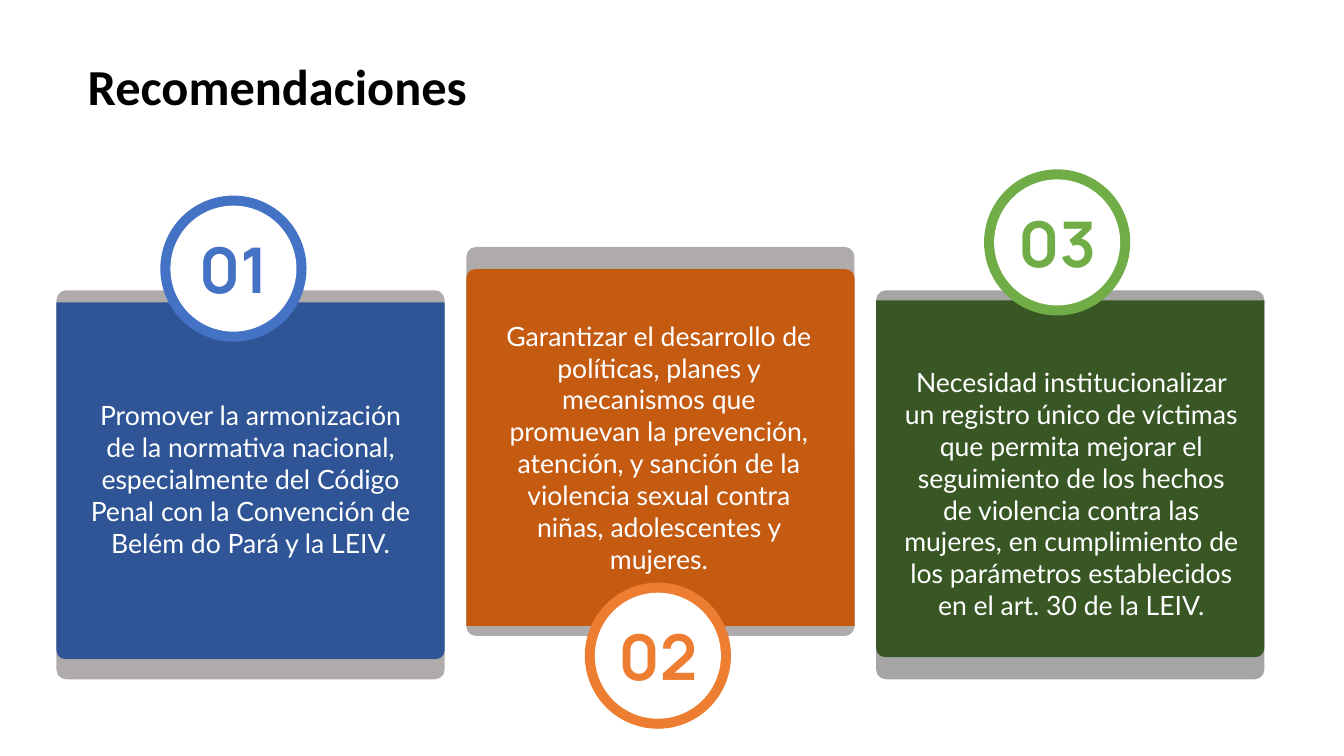
from dataclasses import dataclass

from pptx import Presentation
from pptx.dml.color import RGBColor
from pptx.enum.shapes import MSO_SHAPE
from pptx.enum.text import MSO_ANCHOR, PP_ALIGN
from pptx.util import Inches, Pt

ROUNDED = MSO_SHAPE.ROUNDED_RECTANGLE
TWO_ROUNDED = MSO_SHAPE.ROUND_2_SAME_RECTANGLE
OVAL = MSO_SHAPE.OVAL
LEFT, CENTER = PP_ALIGN.LEFT, PP_ALIGN.CENTER
TOP, MIDDLE = MSO_ANCHOR.TOP, MSO_ANCHOR.MIDDLE


@dataclass(frozen=True)
class Theme:
    white: str = "FFFFFF"
    black: str = "000000"
    warm_gray: str = "AFABAB"
    gray: str = "A5A5A5"
    blue: str = "4472C4"
    dark_blue: str = "2F5597"
    orange: str = "ED7D31"
    dark_orange: str = "C55A11"
    green: str = "70AD47"
    dark_green: str = "385724"
    title_font: str = "Calibri"
    number_font: str = "Manrope"
    body_font: str = "Lato"
    title_size: int = 36
    number_size: int = 45
    body_size: int = 19


theme = Theme()


def add_block(kind, left, top, width, height, color, corners=()):
    shape = slide.shapes.add_shape(
        kind, Inches(left), Inches(top), Inches(width), Inches(height))
    for index, corner in enumerate(corners):
        shape.adjustments[index] = corner
    shape.shadow.inherit = False
    shape.fill.solid()
    shape.fill.fore_color.rgb = RGBColor.from_string(color)
    shape.line.fill.background()


def add_text(text, left, top, width, height, font, size, color,
             bold=False, align=CENTER, anchor=TOP, inset=0.02):
    box = slide.shapes.add_textbox(
        Inches(left), Inches(top), Inches(width), Inches(height))
    frame = box.text_frame
    frame.word_wrap = True
    frame.vertical_anchor = anchor
    frame.margin_left = frame.margin_right = Inches(inset)
    frame.margin_top = frame.margin_bottom = Inches(inset)
    frame.text = text
    paragraph = frame.paragraphs[0]
    paragraph.alignment = align
    run_font = paragraph.runs[0].font
    run_font.name = font
    run_font.size = Pt(size)
    run_font.bold = bold
    run_font.color.rgb = RGBColor.from_string(color)


presentation = Presentation()
presentation.slide_width = Inches(13.33)
presentation.slide_height = Inches(7.5)
slide = presentation.slides.add_slide(presentation.slide_layouts[6])

# Card measures
CARD_LEFT, CARD_STEP, CARD_WIDTH = 0.56, 4.065, 3.85
BACK_HEIGHT, FRONT_HEIGHT = 3.86, 3.54
RING, DISC = 1.45, 1.25
NUMBER_WIDTH, NUMBER_HEIGHT = 0.81, 0.85
CORNER = 0.025
ROUND_TOP, ROUND_BOTTOM = (CORNER, 0), (0, CORNER)

# Back colour and top, front colour, top and corners,
# badge colour and centre, text and its box
cards = [
    (theme.warm_gray, 2.88, theme.dark_blue, 3.0, ROUND_BOTTOM,
     theme.blue, (2.315, 2.665),
     "Promover la armonización de la normativa nacional, especialmente del "
     "Código Penal con la Convención de Belém do Pará y la LEIV.",
     (0.8, 3.94, 3.37, 1.65)),
    (theme.warm_gray, 2.45, theme.dark_orange, 2.67, ROUND_TOP,
     theme.orange, (6.525, 6.505),
     "Garantizar el desarrollo de políticas, planes y mecanismos que "
     "promuevan la prevención, atención, y sanción de la violencia sexual "
     "contra niñas, adolescentes y mujeres.",
     (4.96, 3.15, 3.15, 2.61)),
    (theme.gray, 2.88, theme.dark_green, 2.98, ROUND_BOTTOM,
     theme.green, (10.485, 2.405),
     "Necesidad institucionalizar un registro único de víctimas que permita "
     "mejorar el seguimiento de los hechos de violencia contra las mujeres, "
     "en cumplimiento de los parámetros establecidos en el art. 30 de la LEIV.",
     (8.93, 3.61, 3.39, 2.93)),
]

# Title
add_text("Recomendaciones", 0.82, 0.5, 4, 0.6, theme.title_font,
         theme.title_size, theme.black, bold=True, align=LEFT, inset=0.05)

for index, (back_color, back_top, front_color, front_top, corners,
            badge_color, (center_x, center_y), text, text_box) in enumerate(cards):
    # Card
    left = CARD_LEFT + index * CARD_STEP
    add_block(ROUNDED, left, back_top, CARD_WIDTH, BACK_HEIGHT,
              back_color, (CORNER,))
    add_block(TWO_ROUNDED, left, front_top, CARD_WIDTH, FRONT_HEIGHT,
              front_color, corners)
    add_text(text, *text_box, theme.body_font, theme.body_size, theme.white)

    # Numbered badge
    for diameter, color in ((RING, badge_color), (DISC, theme.white)):
        add_block(OVAL, center_x - diameter / 2, center_y - diameter / 2,
                  diameter, diameter, color)
    add_text(f"{index + 1:02}", center_x - NUMBER_WIDTH / 2,
             center_y - NUMBER_HEIGHT / 2, NUMBER_WIDTH, NUMBER_HEIGHT,
             theme.number_font, theme.number_size, badge_color,
             bold=True, anchor=MIDDLE, inset=0)

presentation.save("out.pptx")
